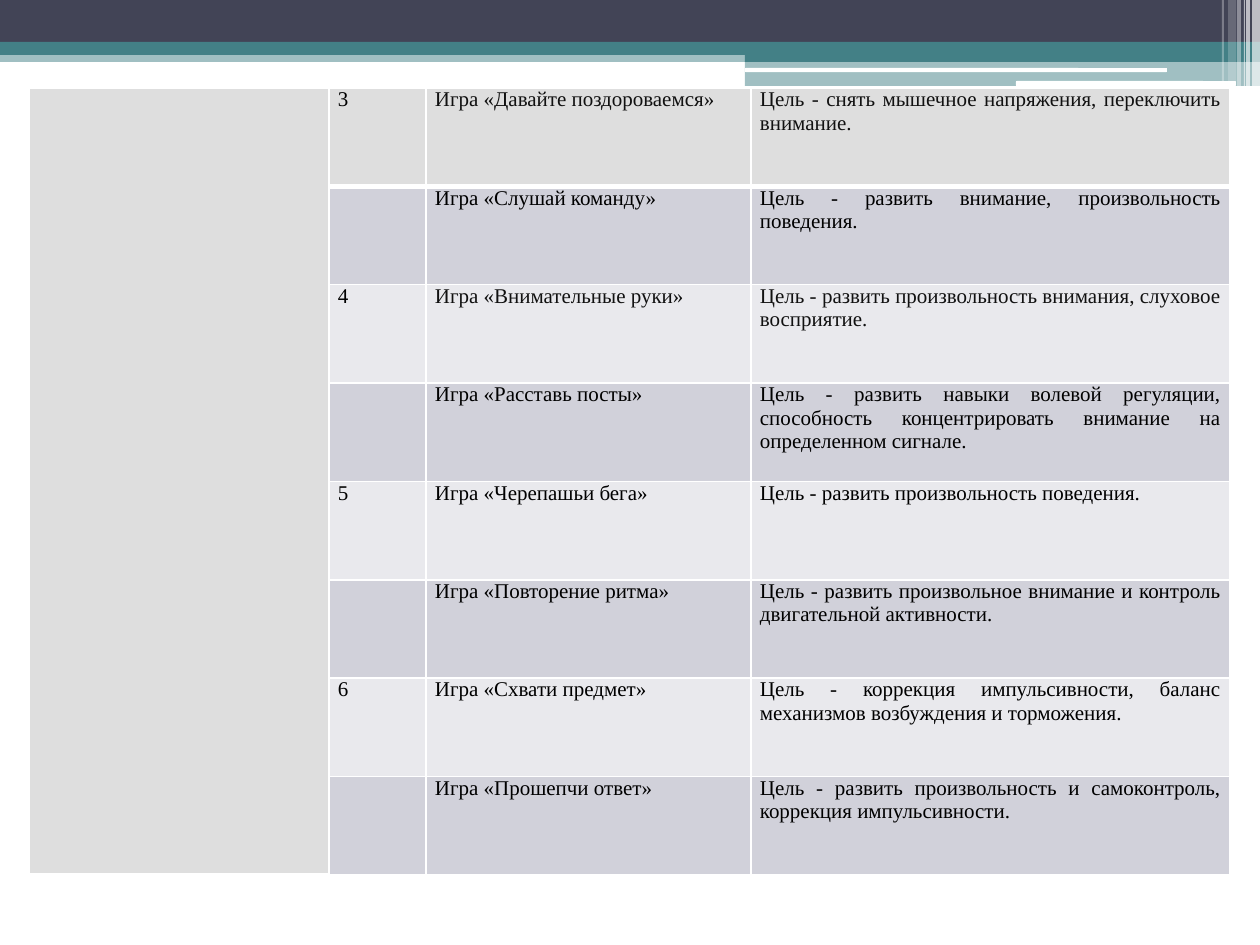
from lxml import etree
from pptx import Presentation
from pptx.dml.color import RGBColor
from pptx.enum.shapes import MSO_SHAPE
from pptx.enum.text import PP_ALIGN
from pptx.oxml.ns import qn
from pptx.util import Pt

RECT = MSO_SHAPE.RECTANGLE
ROUNDED = MSO_SHAPE.ROUNDED_RECTANGLE
JUSTIFY = PP_ALIGN.JUSTIFY
PX_PER_INCH = 126
EMU_PER_INCH = 914400

WHITE, NAVY, TEAL = "FFFFFF", "424456", "438086"
BLACK, SOFT_BLACK = "000000", "111111"
HEADER_FILL, DARK_BAND, LIGHT_BAND = "DEDEDE", "D1D1DA", "E9E9ED"

BANDS = [
    (RECT, 0, 50, 1260, 12, TEAL, 50),
    (RECT, 0, 0, 1260, 43, NAVY, 100),
    (RECT, 0, 42, 1260, 13, TEAL, 100),
    (RECT, 745, 49, 515, 13, TEAL, 100),
    (RECT, 745, 61, 515, 25, TEAL, 50),
    (ROUNDED, 745, 68, 422, 4, WHITE, 100),
    (ROUNDED, 1016, 81, 220, 5, WHITE, 100),
]
STRIPES = [
    (1252, 8, 86, 65),
    (1246, 4, 86, 65),
    (1244, 1, 86, 60),
    (1237, 4, 86, 40),
    (1228, 8, 81, 20),
    (1222, 2, 81, 30),
]

TABLE_LEFT, TABLE_TOP, TABLE_HEIGHT = 29, 88, 787
COLUMN_WIDTHS = [300, 97, 325, 479]
GAMES = [
    ("3", "Игра «Давайте поздороваемся»",
     "Цель - снять мышечное напряжения, переключить внимание.", SOFT_BLACK),
    ("", "Игра «Слушай команду»",
     "Цель - развить внимание, произвольность поведения.", BLACK),
    ("4", "Игра «Внимательные руки»",
     "Цель - развить произвольность внимания, слуховое восприятие.", SOFT_BLACK),
    ("", "Игра «Расставь посты»",
     "Цель - развить навыки волевой регуляции, способность концентрировать "
     "внимание на определенном сигнале.", BLACK),
    ("5", "Игра «Черепашьи бега»",
     "Цель - развить произвольность поведения.", BLACK),
    ("", "Игра «Повторение ритма»",
     "Цель - развить произвольное внимание и контроль двигательной активности.",
     BLACK),
    ("6", "Игра «Схвати предмет»",
     "Цель - коррекция импульсивности, баланс механизмов возбуждения и "
     "торможения.", BLACK),
    ("", "Игра «Прошепчи ответ»",
     "Цель - развить произвольность и самоконтроль, коррекция импульсивности.",
     BLACK),
]


def px(length):
    return round(length * EMU_PER_INCH / PX_PER_INCH)


def color(hex_code):
    return RGBColor.from_string(hex_code)


def apply(target, values):
    for name, value in values.items():
        setattr(target, name, value)


def paint(target, hex_code):
    target.fill.solid()
    target.fill.fore_color.rgb = color(hex_code)


def add_band(slide, kind, left, top, width, height, hex_code, opacity):
    band = slide.shapes.add_shape(kind, px(left), px(top), px(width), px(height))
    band.shadow.inherit = False
    band.line.fill.background()
    paint(band, hex_code)
    if opacity < 100:
        tint = band.fill._xPr.find(qn("a:solidFill"))[0]
        etree.SubElement(tint, qn("a:alpha"), val=str(opacity * 1000))


def set_borders(cell, bottom_width):
    properties = cell._tc.get_or_add_tcPr()
    for side, width in {"L": 1, "R": 1, "T": 1, "B": bottom_width}.items():
        border = etree.SubElement(properties, qn(f"a:ln{side}"), w=str(Pt(width)))
        solid = etree.SubElement(border, qn("a:solidFill"))
        etree.SubElement(solid, qn("a:srgbClr"), val=WHITE)


def style_cell(cell, hex_code, bottom_width):
    apply(cell, {"margin_left": px(9), "margin_right": px(9),
                 "margin_top": 0, "margin_bottom": 0})
    set_borders(cell, bottom_width)
    paint(cell, hex_code)


def write_cell(cell, wording, hex_code):
    paragraph = cell.text_frame.paragraphs[0]
    paragraph.alignment = JUSTIFY
    run = paragraph.add_run()
    run.text = wording
    apply(run.font, {"name": "Times New Roman", "size": Pt(12), "bold": False})
    run.font.color.rgb = color(hex_code)


def row_fill(index):
    if index == 0:
        return HEADER_FILL
    return DARK_BAND if index % 2 else LIGHT_BAND


def add_games_table(slide):
    table = slide.shapes.add_table(
        len(GAMES), len(COLUMN_WIDTHS), px(TABLE_LEFT), px(TABLE_TOP),
        px(sum(COLUMN_WIDTHS)), px(TABLE_HEIGHT)).table
    for column, width in zip(table.columns, COLUMN_WIDTHS):
        column.width = px(width)
    for index, (number, game, goal, game_color) in enumerate(GAMES):
        table.rows[index].height = px(TABLE_HEIGHT / len(GAMES))
        entries = [("", BLACK), (number, BLACK), (game, game_color), (goal, game_color)]
        for position, (wording, hex_code) in enumerate(entries):
            cell = table.cell(index, position)
            fill = HEADER_FILL if position == 0 else row_fill(index)
            style_cell(cell, fill, 3 if index == 0 else 1)
            if wording:
                write_cell(cell, wording, hex_code)
    table.cell(0, 0).merge(table.cell(len(GAMES) - 1, 0))


def main():
    presentation = Presentation()
    apply(presentation, {"slide_width": px(1260), "slide_height": px(945)})
    slide = presentation.slides.add_slide(presentation.slide_layouts[6])
    for band in BANDS:
        add_band(slide, *band)
    for left, width, height, opacity in STRIPES:
        add_band(slide, RECT, left, 0, width, height, WHITE, opacity)
    add_games_table(slide)
    presentation.save("out.pptx")


if __name__ == "__main__":
    main()
